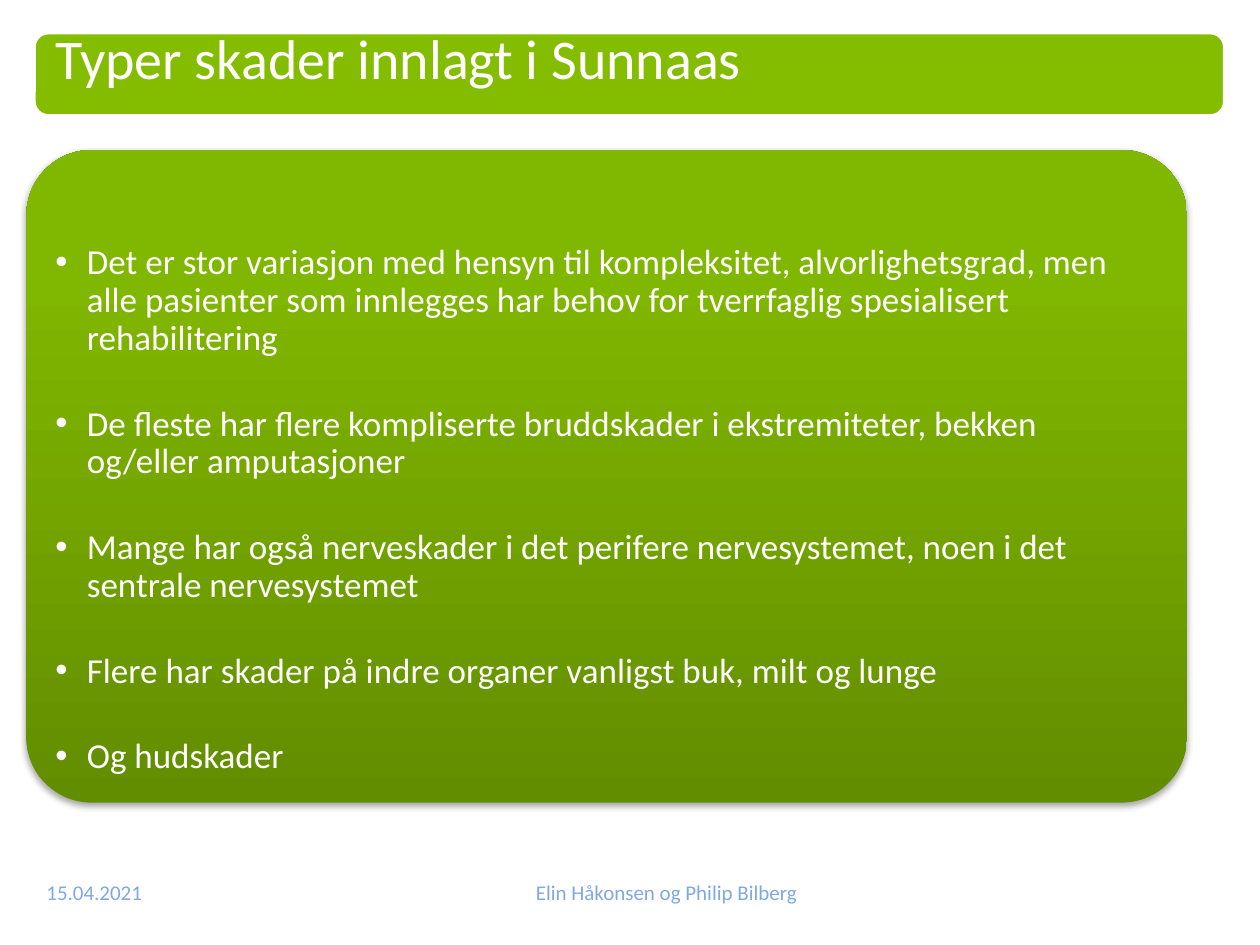
from lxml.etree import SubElement
from pptx import Presentation
from pptx.dml.color import RGBColor
from pptx.enum.shapes import MSO_SHAPE
from pptx.enum.text import MSO_ANCHOR, PP_ALIGN
from pptx.oxml import parse_xml
from pptx.oxml.ns import nsdecls, qn
from pptx.util import Inches, Pt

# Content
TITLE = "Typer skader innlagt i Sunnaas"
BULLETS = [
    "Det er stor variasjon med hensyn til kompleksitet, alvorlighetsgrad, men alle "
    "pasienter som innlegges har behov for tverrfaglig spesialisert rehabilitering",
    "De fleste har flere kompliserte bruddskader i ekstremiteter, bekken og/eller amputasjoner",
    "Mange har også nerveskader i det perifere nervesystemet, noen i det sentrale nervesystemet",
    "Flere har skader på indre organer vanligst buk, milt og lunge",
    "Og hudskader",
]
DATE = "15.04.2021"
AUTHORS = "Elin Håkonsen og Philip Bilberg"

FONT = "Calibri"
COLORS = {"white": "FFFFFF", "banner": "84BD00", "footer": "81A9E1", "shadow": "000000"}
PANEL_STOPS = [(0, "628D00"), (80, "80B700"), (100, "80B800")]


def add_rounded(page, place, adjustment):
    shape = page.shapes.add_shape(MSO_SHAPE.ROUNDED_RECTANGLE, *map(Inches, place))
    shape.adjustments[0] = adjustment
    shape.shadow.inherit = False
    return shape


def add_text(page, place, paragraphs, size, color, align=PP_ALIGN.LEFT,
             anchor=MSO_ANCHOR.MIDDLE, insets=(0.1, 0.05, 0.1, 0.05),
             line_spacing=1.0, space_after=0, bullet=None, indent=0.25):
    box = page.shapes.add_textbox(*map(Inches, place))
    frame = box.text_frame
    frame.word_wrap = True
    frame.vertical_anchor = anchor
    (frame.margin_left, frame.margin_top,
     frame.margin_right, frame.margin_bottom) = map(Inches, insets)
    for index, text in enumerate(paragraphs):
        para = frame.add_paragraph() if index else frame.paragraphs[0]
        para.alignment = align
        para.line_spacing = line_spacing
        para.space_after = Pt(space_after)
        if bullet:
            properties = para._p.get_or_add_pPr()
            properties.set("marL", str(Inches(indent)))
            properties.set("indent", str(-Inches(indent)))
            SubElement(properties, qn("a:buFont"), typeface="Arial")
            SubElement(properties, qn("a:buChar"), char=bullet)
        span = para.add_run()
        span.text = text
        span.font.name = FONT
        span.font.size = Pt(size)
        span.font.color.rgb = RGBColor.from_string(COLORS[color])
    return box


deck = Presentation()
deck.slide_width, deck.slide_height = Inches(10), Inches(7.5)
page = deck.slides.add_slide(deck.slide_layouts[6])

# Panel with gradient and soft shadow
panel = add_rounded(page, (0.21, 1.19, 9.21, 5.18), 0.1)
panel.line.fill.background()
stops = "".join(
    f'<a:gs pos="{position * 1000}"><a:srgbClr val="{color}"/></a:gs>'
    for position, color in PANEL_STOPS)
panel.fill.gradient()
gradient = panel._element.spPr.find(qn("a:gradFill"))
gradient.getparent().replace(gradient, parse_xml(
    f'<a:gradFill rotWithShape="1" {nsdecls("a")}><a:gsLst>{stops}</a:gsLst>'
    '<a:lin ang="16200000" scaled="0"/></a:gradFill>'))
effects = panel._element.spPr.find(qn("a:effectLst"))
effects.append(parse_xml(
    f'<a:outerShdw {nsdecls("a")} blurRad="{Pt(3.1)}" dist="{Pt(1.8)}" dir="5400000" '
    f'rotWithShape="0"><a:srgbClr val="{COLORS["shadow"]}"><a:alpha val="35000"/>'
    '</a:srgbClr></a:outerShdw>'))

add_text(page, (0.36, 1.34, 8.9, 4.88), BULLETS, 20, "white", anchor=MSO_ANCHOR.TOP,
         insets=(0.08, 0.6, 0.08, 0), line_spacing=0.9, space_after=27.4, bullet="•")

# Title banner
banner = add_rounded(page, (0.27, 0.26, 9.45, 0.66), 0.17)
banner.fill.solid()
banner.fill.fore_color.rgb = RGBColor.from_string(COLORS["banner"])
banner.line.color.rgb = RGBColor.from_string(COLORS["white"])
banner.line.width = Pt(2)
add_text(page, (0.31, 0.25, 9.39, 0.65), [TITLE], 32, "white", anchor=MSO_ANCHOR.TOP,
         insets=(0.13, 0, 0.13, 0), line_spacing=0.9)

# Footer
add_text(page, (0.27, 6.9, 1.1, 0.36), [DATE], 12, "footer")
add_text(page, (1.5, 6.9, 7.58, 0.36), [AUTHORS], 12, "footer", align=PP_ALIGN.CENTER)

deck.save("out.pptx")
